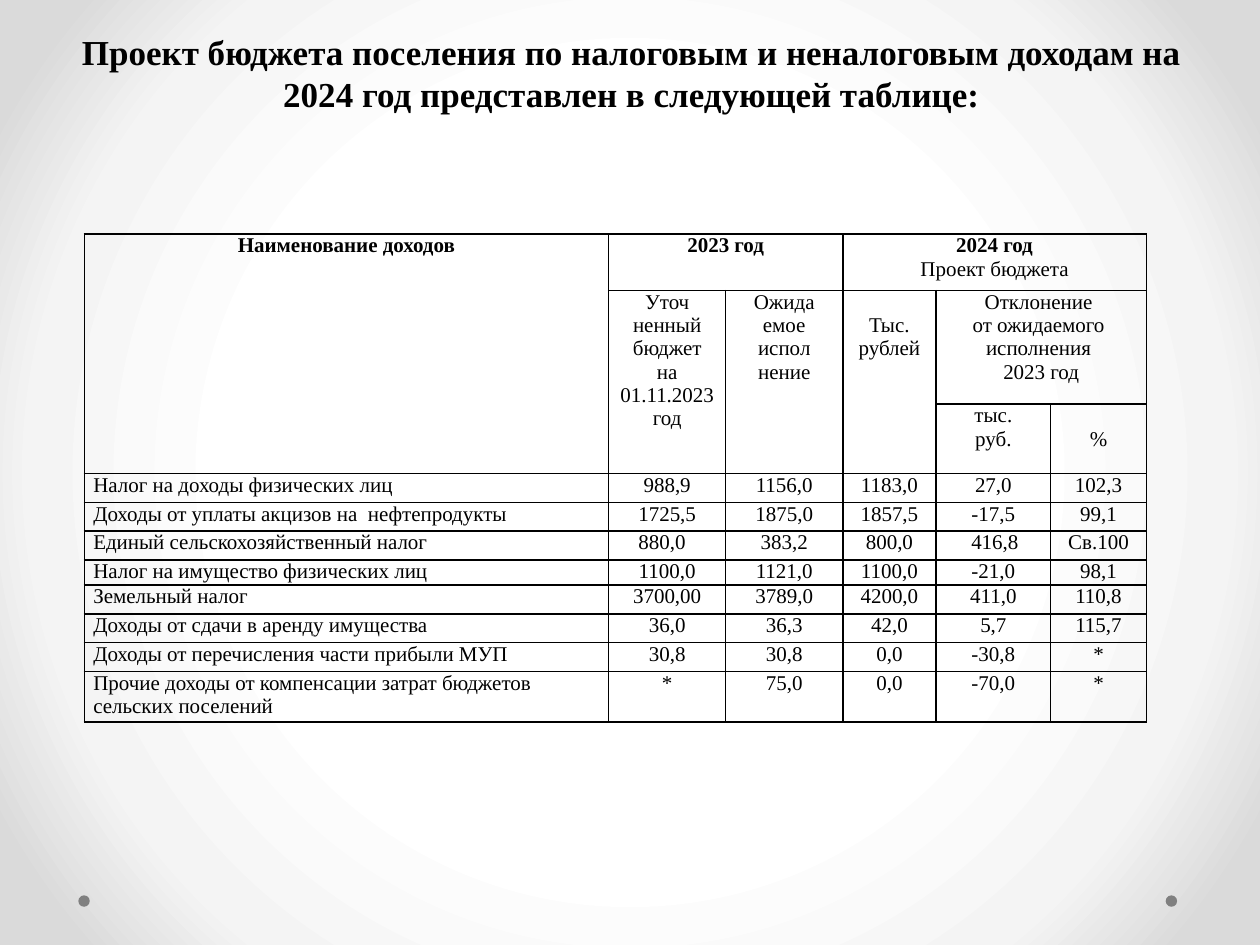
from dataclasses import dataclass

import lxml.etree
import pptx
import pptx.dml.color
import pptx.enum.text
import pptx.oxml
import pptx.oxml.ns
import pptx.util
from pptx.util import Cm

ALIGN = pptx.enum.text.PP_ALIGN
BLACK = pptx.dml.color.RGBColor(0x00, 0x00, 0x00)
GREY = pptx.dml.color.RGBColor(0x80, 0x80, 0x80)
WHITE = pptx.dml.color.RGBColor(0xFF, 0xFF, 0xFF)
PALE = pptx.dml.color.RGBColor(0xF4, 0xF4, 0xF4)
SILVER = pptx.dml.color.RGBColor(0xDA, 0xDA, 0xDA)

FONT = "Times New Roman"
NAMESPACES = pptx.oxml.ns.nsdecls("a", "p")
LINE = Cm(0.47)
SIDE = Cm(0.18)
COLUMNS = [10.57, 2.36, 2.36, 1.88, 2.31, 1.93]
ROWS = [1.14, 2.29, 1.4] + [0.58] * 3 + [0.48] + [0.58] * 4


@dataclass
class Heading:
    row: int
    column: int
    lines: list[str]
    rows: int = 1
    columns: int = 1
    bold_lines: int = 0
    top: int = 0


HEADINGS = [
    Heading(0, 0, ["Наименование доходов"], rows=3, bold_lines=1),
    Heading(0, 1, ["2023 год"], columns=2, bold_lines=1),
    Heading(0, 3, ["2024 год", "Проект бюджета"], columns=3, bold_lines=1),
    Heading(1, 1, ["Уточ", "ненный бюджет", "на", "01.11.2023 год"], rows=2),
    Heading(1, 2, ["Ожида", "емое испол", "нение"], rows=2),
    Heading(1, 3, ["Тыс.", "рублей"], rows=2, top=LINE),
    Heading(1, 4, ["Отклонение ", "от ожидаемого ", "исполнения ", "2023 год"], columns=2),
    Heading(2, 4, ["тыс.", "руб."]),
    Heading(2, 5, ["%"], top=LINE),
]

INCOMES = [
    ["Налог на доходы физических лиц", "988,9", "1156,0", "1183,0", "27,0", "102,3"],
    ["Доходы от уплаты акцизов на  нефтепродукты", "1725,5", "1875,0", "1857,5", "-17,5", "99,1"],
    ["Единый сельскохозяйственный налог", "880,0", "383,2", "800,0", "416,8", "Св.100"],
    ["Налог на имущество физических лиц", "1100,0", "1121,0", "1100,0", "-21,0", "98,1"],
    ["Земельный налог", "3700,00", "3789,0", "4200,0", "411,0", "110,8"],
    ["Доходы от сдачи в аренду имущества", "36,0", "36,3", "42,0", "5,7", "115,7"],
    ["Доходы от перечисления части прибыли МУП", "30,8", "30,8", "0,0", "-30,8", "*"],
    ["Прочие доходы от компенсации затрат бюджетов сельских поселений",
     "*", "75,0", "0,0", "-70,0", "*"],
]
# Left-aligned figures and their left margins, by table row and column
INDENTED = {(5, 1): Cm(0.6), (5, 4): Cm(0.71)}


def write(frame, lines: list[str], *, size: float = 12, bold_lines: int = 0,
          align=ALIGN.CENTER) -> None:
    """Write one paragraph per line; the first bold_lines of them are bold."""
    for index, line in enumerate(lines):
        para = frame.paragraphs[0] if index == 0 else frame.add_paragraph()
        para.alignment = align
        span = para.add_run()
        span.text = line
        span.font.name = FONT
        span.font.size = pptx.util.Pt(size)
        span.font.bold = index < bold_lines
        span.font.color.rgb = BLACK


def paint_background(page) -> None:
    """Give the page a circular gradient that darkens towards the corners."""
    stops = "".join(
        f'<a:gs pos="{place * 1000}"><a:srgbClr val="{color}"/></a:gs>'
        for place, color in [(50, WHITE), (76, PALE), (92, SILVER)])
    page.background.fill.solid()
    properties = page.background.fill._xPr
    properties.replace(properties[0], pptx.oxml.parse_xml(
        f'<a:gradFill {NAMESPACES} rotWithShape="1"><a:gsLst>{stops}</a:gsLst>'
        '<a:path path="circle"><a:fillToRect l="50000" t="50000" r="50000" b="50000"/>'
        '</a:path></a:gradFill>'))


def add_dot(page, left: int) -> None:
    dot = page.shapes.add_shape(
        pptx.enum.shapes.MSO_SHAPE.OVAL, left, Cm(18.05), Cm(0.23), Cm(0.23))
    dot.shadow.inherit = False
    dot.fill.solid()
    dot.fill.fore_color.rgb = GREY
    dot.line.fill.background()


def add_title(page, text: str) -> None:
    box = page.shapes.add_textbox(Cm(1.3), Cm(0.91), Cm(22.86), Cm(1.52))
    box.text_frame.word_wrap = True
    box.text_frame.vertical_anchor = pptx.enum.text.MSO_ANCHOR.BOTTOM
    write(box.text_frame, [text], size=20, bold_lines=1)


def style_cell(cell) -> None:
    """Set the margins, clear the fill and draw all four borders."""
    cell.margin_left = cell.margin_right = SIDE
    cell.margin_top = cell.margin_bottom = 0
    cell.fill.background()
    properties = cell._tc.get_or_add_tcPr()
    for index, side in enumerate(["lnL", "lnR", "lnT", "lnB"]):
        properties.insert(index, pptx.oxml.parse_xml(
            f'<a:{side} {NAMESPACES} w="12700"><a:solidFill>'
            f'<a:srgbClr val="{BLACK}"/></a:solidFill></a:{side}>'))


def add_income_table(page) -> None:
    table = page.shapes.add_table(
        len(ROWS), len(COLUMNS), Cm(1.7), Cm(4.72), Cm(sum(COLUMNS)), Cm(sum(ROWS))).table
    table.first_row = table.horz_banding = False
    for column, width in zip(table.columns, COLUMNS):
        column.width = Cm(width)
    for row, height in zip(table.rows, ROWS):
        row.height = Cm(height)
    for cell in table.iter_cells():
        style_cell(cell)

    for heading in HEADINGS:
        cell = table.cell(heading.row, heading.column)
        if heading.rows * heading.columns > 1:
            cell.merge(table.cell(heading.row + heading.rows - 1,
                                  heading.column + heading.columns - 1))
        cell.margin_top = heading.top
        write(cell.text_frame, heading.lines, bold_lines=heading.bold_lines)

    for row, income in enumerate(INCOMES, start=3):
        for column, text in enumerate(income):
            cell = table.cell(row, column)
            indented = (row, column) in INDENTED
            if indented:
                cell.margin_left = INDENTED[row, column]
            write(cell.text_frame, [text],
                  align=ALIGN.LEFT if column == 0 or indented else ALIGN.CENTER)


def main() -> None:
    deck = pptx.Presentation()
    deck.slide_width, deck.slide_height = Cm(25.4), Cm(19.05)
    page = deck.slides.add_slide(deck.slide_layouts[6])
    paint_background(page)
    for left in (Cm(23.5), Cm(1.58)):
        add_dot(page, left)
    add_title(page, "Проект бюджета поселения по налоговым и неналоговым доходам на "
                    "2024 год представлен в следующей таблице:")
    add_income_table(page)
    deck.save("out.pptx")


if __name__ == "__main__":
    main()
